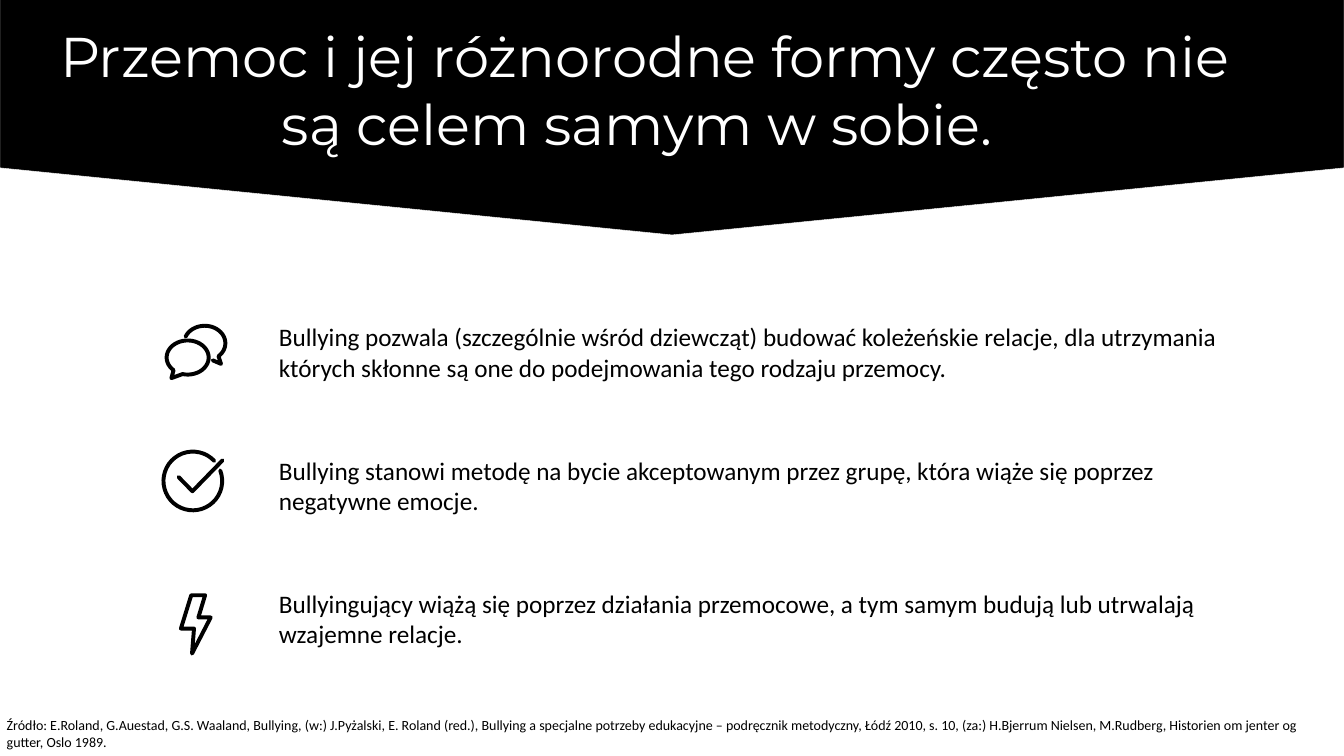
import math

import lxml.etree
import pptx
import pptx.dml.color
import pptx.enum.shapes
import pptx.enum.text
import pptx.oxml.ns
import pptx.util

Cm = pptx.util.Cm
Pt = pptx.util.Pt
qn = pptx.oxml.ns.qn

COLOURS = {"ink": "000000", "paper": "FFFFFF"}
WIDTH, HEIGHT = 33.87, 19.05
UNITS_PER_CM = 1000

ALIGN = pptx.enum.text.PP_ALIGN
FORMATS = {
    "title": {"name": "Montserrat", "size": Pt(40), "colour": "paper", "alignment": ALIGN.CENTER},
    "reason": {"name": "Calibri", "size": Pt(18), "colour": "ink", "alignment": ALIGN.LEFT},
    "source": {"name": "Calibri", "size": Pt(10), "colour": "ink", "alignment": ALIGN.LEFT},
}

TITLE = "Przemoc i jej różnorodne formy często nie są celem samym w sobie. "
SOURCE = (
    "Źródło: E.Roland, G.Auestad, G.S. Waaland, Bullying, (w:) J.Pyżalski, E. Roland (red.), "
    "Bullying a specjalne potrzeby edukacyjne – podręcznik metodyczny, Łódź 2010, s. 10, "
    "(za:) H.Bjerrum Nielsen, M.Rudberg, Historien om jenter og gutter, Oslo 1989."
)


def colour(name):
    return pptx.dml.color.RGBColor.from_string(COLOURS[name])


def arc(centre, radii, start, end, steps=40):
    angles = [math.radians(start + (end - start) * step / steps) for step in range(steps + 1)]
    return [
        (centre[0] + radii[0] * math.cos(angle), centre[1] + radii[1] * math.sin(angle))
        for angle in angles
    ]


FRONT_BUBBLE = arc((0.56, 0.83), (0.53, 0.43), 104, -228) + [(0.15, 1.35)]
BACK_BUBBLE = arc((0.99, 0.47), (0.52, 0.44), -158, 48) + [(1.4, 0.99), (1.19, 0.9)]
RING = arc((0.77, 0.77), (0.74, 0.74), -21, 317)
TICK = [(0.41, 0.67), (0.76, 1.03), (1.52, 0.25)]
BOLT = [(0.3, 0.04), (0.65, 0.04), (0.48, 0.6), (0.79, 0.6), (0.32, 1.51), (0.37, 0.88), (0.04, 0.88)]

REASONS = [
    (
        "Bullying pozwala (szczególnie wśród dziewcząt) budować koleżeńskie relacje, "
        "dla utrzymania których skłonne są one do podejmowania tego rodzaju przemocy.",
        (0.08, 0.2),
        [(FRONT_BUBBLE, True), (BACK_BUBBLE, False)],
    ),
    (
        "Bullying stanowi metodę na bycie akceptowanym przez grupę, "
        "która wiąże się poprzez negatywne emocje.",
        (0, 0.01),
        [(RING, False), (TICK, False)],
    ),
    (
        "Bullyingujący wiążą się poprzez działania przemocowe, "
        "a tym samym budują lub utrwalają wzajemne relacje.",
        (0.43, 0.26),
        [(BOLT, True)],
    ),
]


def add_text(slide, box, text, style):
    shape = slide.shapes.add_textbox(*map(Cm, box))
    frame = shape.text_frame
    frame.word_wrap = True
    frame.auto_size = pptx.enum.text.MSO_AUTO_SIZE.SHAPE_TO_FIT_TEXT
    paragraph = frame.paragraphs[0]
    run = paragraph.add_run()
    run.text = text
    for key, value in FORMATS[style].items():
        if key == "colour":
            run.font.color.rgb = colour(value)
        else:
            setattr(paragraph if key == "alignment" else run.font, key, value)


def add_icon(slide, left, top, strokes):
    scaled = [
        ([(x * UNITS_PER_CM, y * UNITS_PER_CM) for x, y in points], closed)
        for points, closed in strokes
    ]
    builder = slide.shapes.build_freeform(*scaled[0][0][0], scale=Cm(1) / UNITS_PER_CM)
    for index, (points, closed) in enumerate(scaled):
        if index:
            builder.move_to(*points[0])
        builder.add_line_segments(points[1:], close=closed)
    shape = builder.convert_to_shape(Cm(left), Cm(top))
    shape.shadow.inherit = False
    shape.fill.background()
    shape.line.color.rgb = colour("ink")
    shape.line.width = Pt(2.8)
    outline = shape.element.spPr.find(qn("a:ln"))
    outline.set("cap", "rnd")
    lxml.etree.SubElement(outline, qn("a:round"))


def add_header(slide, left, top, width, height):
    shape = slide.shapes.add_shape(
        pptx.enum.shapes.MSO_SHAPE.PENTAGON,
        Cm(left + (width - height) / 2),
        Cm(top + (height - width) / 2),
        Cm(height),
        Cm(width),
    )
    shape.rotation = 90
    shape.adjustments[0] = 0.283
    shape.shadow.inherit = False
    shape.fill.solid()
    shape.fill.fore_color.rgb = colour("ink")
    shape.line.color.rgb = colour("paper")
    shape.line.width = Pt(0.25)
    add_text(slide, (left + 0.94, top + 0.48, width - 3.26, 3.68), TITLE, "title")


def add_reasons(slide, left, top, width, height):
    pitch = height / len(REASONS)
    for index, (text, offset, strokes) in enumerate(REASONS):
        row_top = top + index * pitch
        add_icon(slide, left + offset[0], row_top + offset[1], strokes)
        add_text(slide, (left + 2.69, row_top, width - 2.69, 1.8), text, "reason")


def main():
    presentation = pptx.Presentation()
    presentation.slide_width = Cm(WIDTH)
    presentation.slide_height = Cm(HEIGHT)
    slide = presentation.slides.add_slide(presentation.slide_layouts[6])
    add_header(slide, 0, -0.05, WIDTH, 5.97)
    add_reasons(slide, 4.09, 7.98, 27.02, 10.08)
    add_text(slide, (-0.08, 17.93, WIDTH + 0.06, 1.12), SOURCE, "source")
    presentation.save("out.pptx")


if __name__ == "__main__":
    main()
